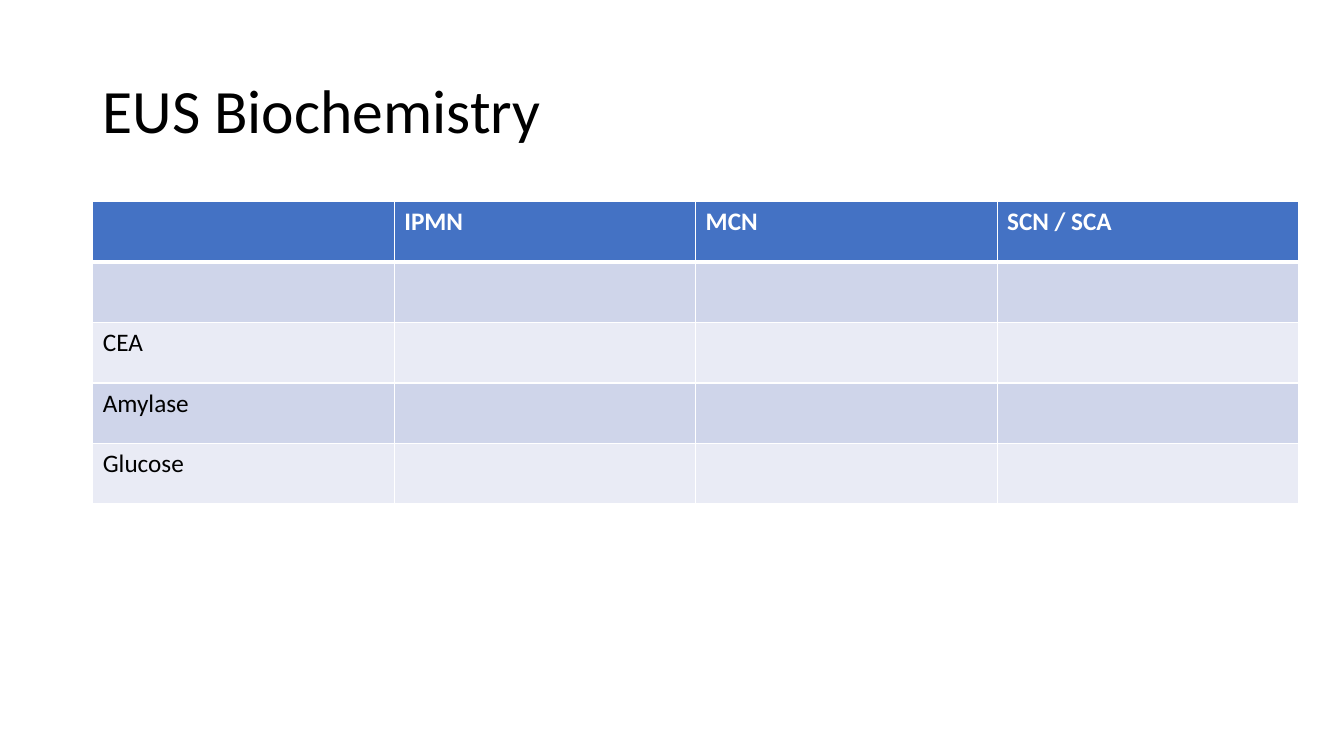
import pptx
import pptx.util
import pptx.dml.color
import pptx.enum.text
import lxml.etree
from pptx.oxml.ns import qn

# Content
TITLE = "EUS Biochemistry"
ROWS = [
    ["", "IPMN", "MCN", "SCN / SCA"],
    ["", "", "", ""],
    ["CEA", "", "", ""],
    ["Amylase", "", "", ""],
    ["Glucose", "", "", ""],
]
COLORS = {"head": "4472C4", "odd": "CFD5EA", "even": "E9EBF5",
          "text": "000000", "white": "FFFFFF"}
LEFT, TOP = 0.92, 2
COL_W, ROW_H = 2.99, 0.6

Inches = pptx.util.Inches


def color(name):
    return pptx.dml.color.RGBColor.from_string(COLORS[name])


def write(frame, text, size=18, ink="text", bold=False, space=1.0):
    para = frame.paragraphs[0]
    para.line_spacing = space
    # Empty cells keep the same font size
    font = para.add_run().font if text else para.font
    if text:
        para.runs[0].text = text
    font.name = "Calibri"
    font.size = pptx.util.Pt(size)
    font.bold = bold
    font.color.rgb = color(ink)


def edge(cell, side, width):
    line = lxml.etree.SubElement(cell._tc.get_or_add_tcPr(), qn("a:ln" + side),
                                 w=str(pptx.util.Pt(width)))
    fill = lxml.etree.SubElement(line, qn("a:solidFill"))
    lxml.etree.SubElement(fill, qn("a:srgbClr"), val=COLORS["white"])


def main():
    deck = pptx.Presentation()
    deck.slide_width, deck.slide_height = Inches(13.33), Inches(7.5)
    slide = deck.slides.add_slide(deck.slide_layouts[6])

    # Title
    box = slide.shapes.add_textbox(Inches(LEFT), Inches(0.4),
                                   Inches(11.5), Inches(1.45))
    box.text_frame.word_wrap = True
    box.text_frame.vertical_anchor = pptx.enum.text.MSO_ANCHOR.MIDDLE
    write(box.text_frame, TITLE, size=44, space=0.9)

    # Table
    count, width = len(ROWS), len(ROWS[0])
    table = slide.shapes.add_table(count, width, Inches(LEFT), Inches(TOP),
                                   Inches(COL_W * width),
                                   Inches(ROW_H * count)).table
    for col in table.columns:
        col.width = Inches(COL_W)
    for r, row in enumerate(ROWS):
        table.rows[r].height = Inches(ROW_H)
        head = r == 0
        band = "head" if head else "odd" if r % 2 else "even"
        for c, text in enumerate(row):
            cell = table.cell(r, c)
            write(cell.text_frame, text, ink="white" if head else "text",
                  bold=head)
            # Thick rule between the header and the body
            for side in "LRTB":
                thick = (r, side) in [(0, "B"), (1, "T")]
                edge(cell, side, 3 if thick else 1)
            cell.fill.solid()
            cell.fill.fore_color.rgb = color(band)

    deck.save("out.pptx")


if __name__ == "__main__":
    main()
